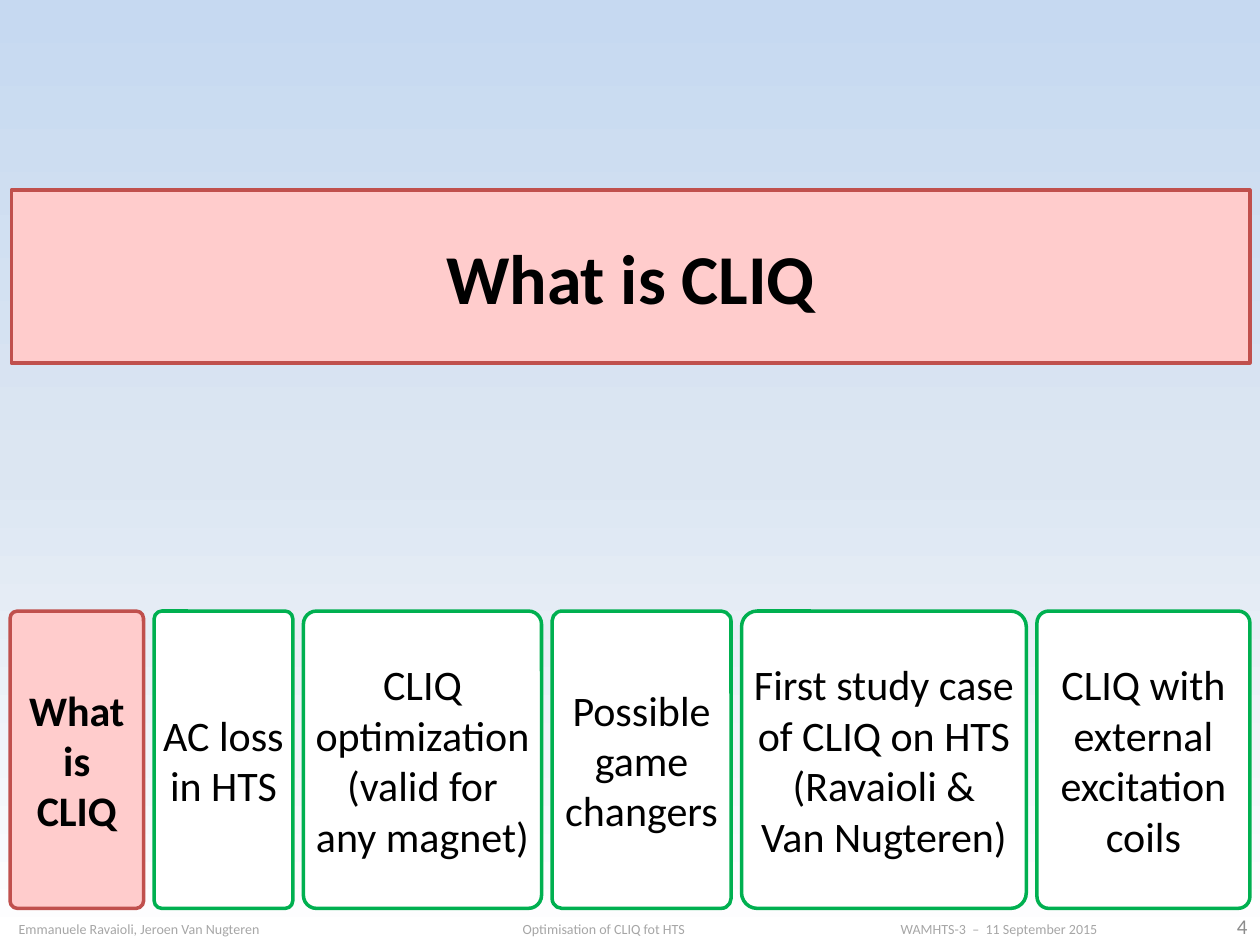
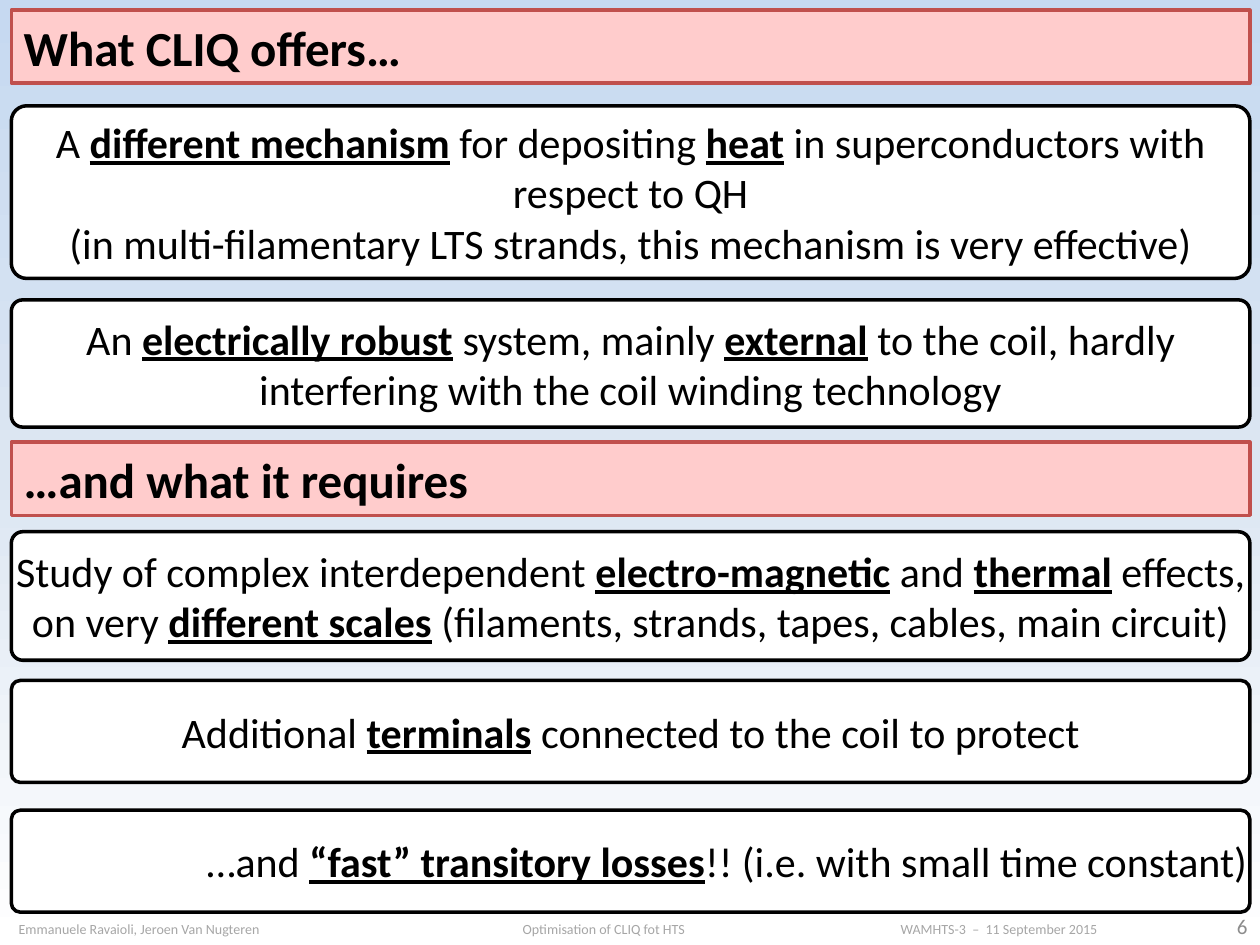
"""Build two slides: a section divider with an agenda row, and what CLIQ offers and requires."""
from copy import deepcopy

from lxml.etree import SubElement
from pptx import Presentation
from pptx.dml.color import RGBColor as RGB
from pptx.enum.shapes import MSO_SHAPE as SHAPE
from pptx.enum.text import MSO_ANCHOR as ANCHOR, PP_ALIGN as ALIGN
from pptx.oxml.ns import qn
from pptx.util import Inches, Pt

SECTION = "What is CLIQ"
AGENDA = [
    (SECTION, 1.06),
    ("AC loss in HTS", 1.10),
    ("CLIQ optimization (valid for any magnet)", 1.89),
    ("Possible\ngame changers", 1.42),
    ("First study case of CLIQ on HTS\n(Ravaioli &\nVan Nugteren)", 2.26),
    ("CLIQ with external excitation coils", 1.69),
]
STATEMENTS = [
    ("heading", 0.08, 0.58, "What CLIQ offers…"),
    ("statement", 0.84, 1.37,
     "A *different mechanism* for depositing *heat* in superconductors with respect to QH\n"
     "(in multi-filamentary LTS strands, this mechanism is very effective)"),
    ("statement", 2.38, 1.01,
     "An *electrically robust* system, mainly *external* to the coil, "
     "hardly interfering with the coil winding technology"),
    ("heading", 3.51, 0.58, "…and what it requires"),
    ("statement", 4.22, 1.02,
     "Study of complex interdependent *electro-magnetic* and *thermal* effects, "
     "on very *different scales* (filaments, strands, tapes, cables, main circuit)"),
    ("statement", 5.40, 0.81, "Additional *terminals* connected to the coil to protect"),
    ("closing", 6.43, 0.81,
     "…and *“fast” transitory losses*!! (i.e. with small time constant)"),
]
FOOTER = ["Emmanuele Ravaioli, Jeroen Van Nugteren", "Optimisation of CLIQ fot HTS",
          "WAMHTS-3  –  11 September 2015"]
FOOTER_TABS = [4, 7]

WIDTH, HEIGHT = 10, 7.5
MARGIN, BAND_WIDTH = 0.09, 9.83
AGENDA_LEFT, AGENDA_WIDTH, AGENDA_TOP, AGENDA_HEIGHT = 0.08, 9.84, 4.85, 2.36

THEME = {
    "font": "Calibri",
    "line": 2,
    "background": [(0, "C6D9F1"), (0.5, "DCE6F2"), (1, "FFFFFF")],
}
PINK = {"fill": "FFCCCC", "edge": "C0504D", "bold": True, "inset": 0.1}
CARD = {"fill": "FFFFFF", "edge": "00B050", "size": 24, "inset": 0.04, "round": 0.055}
STATEMENT = {**CARD, "edge": "000000", "inset": 0, "round": 0.089}
STYLES = {
    "section": {**PINK, "size": 40},
    "heading": {**PINK, "size": 28, "align": ALIGN.LEFT},
    "card": CARD,
    "current": {**CARD, **PINK},
    "statement": STATEMENT,
    "closing": {**STATEMENT, "align": ALIGN.RIGHT},
    "footer": {"size": 8, "ink": "A6A6A6", "align": ALIGN.LEFT, "inset": 0.1},
    "number": {"size": 12, "ink": "8C8C8C", "align": ALIGN.RIGHT, "inset": 0.1},
}


def apply(target, values):
    for name, value in values.items():
        setattr(target, name, value)


def write(frame, text, style):
    inset = Inches(style["inset"])
    apply(frame, {"word_wrap": True, "vertical_anchor": ANCHOR.MIDDLE,
                  "margin_left": inset, "margin_right": inset,
                  "margin_top": Inches(0.05), "margin_bottom": Inches(0.05)})
    for row, line in enumerate(text.split("\n")):
        paragraph = frame.add_paragraph() if row else frame.paragraphs[0]
        paragraph.alignment = style.get("align", ALIGN.CENTER)
        for part, words in enumerate(line.split("*")):
            stressed = part % 2 == 1
            run = paragraph.add_run()
            run.text = words
            apply(run.font, {"name": THEME["font"], "size": Pt(style["size"]),
                             "bold": stressed or style.get("bold", False),
                             "underline": stressed})
            run.font.color.rgb = RGB.from_string(style.get("ink", "000000"))


def add_panel(slide, kind, box, text):
    style = STYLES[kind]
    outline = SHAPE.ROUNDED_RECTANGLE if "round" in style else SHAPE.RECTANGLE
    panel = slide.shapes.add_shape(outline, *map(Inches, box))
    if "round" in style:
        panel.adjustments[0] = style["round"]
    panel.shadow.inherit = False
    panel.fill.solid()
    panel.fill.fore_color.rgb = RGB.from_string(style["fill"])
    panel.line.color.rgb = RGB.from_string(style["edge"])
    panel.line.width = Pt(THEME["line"])
    write(panel.text_frame, text, style)


def add_label(slide, kind, box, text):
    label = slide.shapes.add_textbox(*map(Inches, box))
    write(label.text_frame, text, STYLES[kind])
    return label.text_frame.paragraphs[0]


def paint_background(slide):
    fill = slide.background.fill
    fill.gradient()
    fill.gradient_angle = 270
    stop_list = next(slide.element.iter(qn("a:gsLst")))
    stop_list.append(deepcopy(stop_list[-1]))
    for stop, (position, colour) in zip(fill.gradient_stops, THEME["background"]):
        stop.position = position
        stop.color.rgb = RGB.from_string(colour)


def add_base(deck, number):
    slide = deck.slides.add_slide(deck.slide_layouts[6])
    paint_background(slide)
    add_label(slide, "number", (9.41, 7.21, 0.59, 0.28), str(number))
    credits = add_label(slide, "footer", (0.05, 7.29, BAND_WIDTH, 0.17), "\t".join(FOOTER))
    tabs = SubElement(credits._p.get_or_add_pPr(), qn("a:tabLst"))
    for stop in FOOTER_TABS:
        SubElement(tabs, qn("a:tab"), pos=str(Inches(stop)), algn="l")
    return slide


def build_section(deck):
    slide = add_base(deck, 4)
    add_panel(slide, "section", (MARGIN, 1.51, BAND_WIDTH, 1.37), SECTION)
    gap = (AGENDA_WIDTH - sum(width for _, width in AGENDA)) / (len(AGENDA) - 1)
    left = AGENDA_LEFT
    for topic, width in AGENDA:
        kind = "current" if topic == SECTION else "card"
        add_panel(slide, kind, (left, AGENDA_TOP, width, AGENDA_HEIGHT), topic)
        left += width + gap


def build_statements(deck):
    slide = add_base(deck, 6)
    for kind, top, height, text in STATEMENTS:
        add_panel(slide, kind, (MARGIN, top, BAND_WIDTH, height), text)


def main():
    deck = Presentation()
    apply(deck, {"slide_width": Inches(WIDTH), "slide_height": Inches(HEIGHT)})
    build_section(deck)
    build_statements(deck)
    deck.save("out.pptx")


if __name__ == "__main__":
    main()
